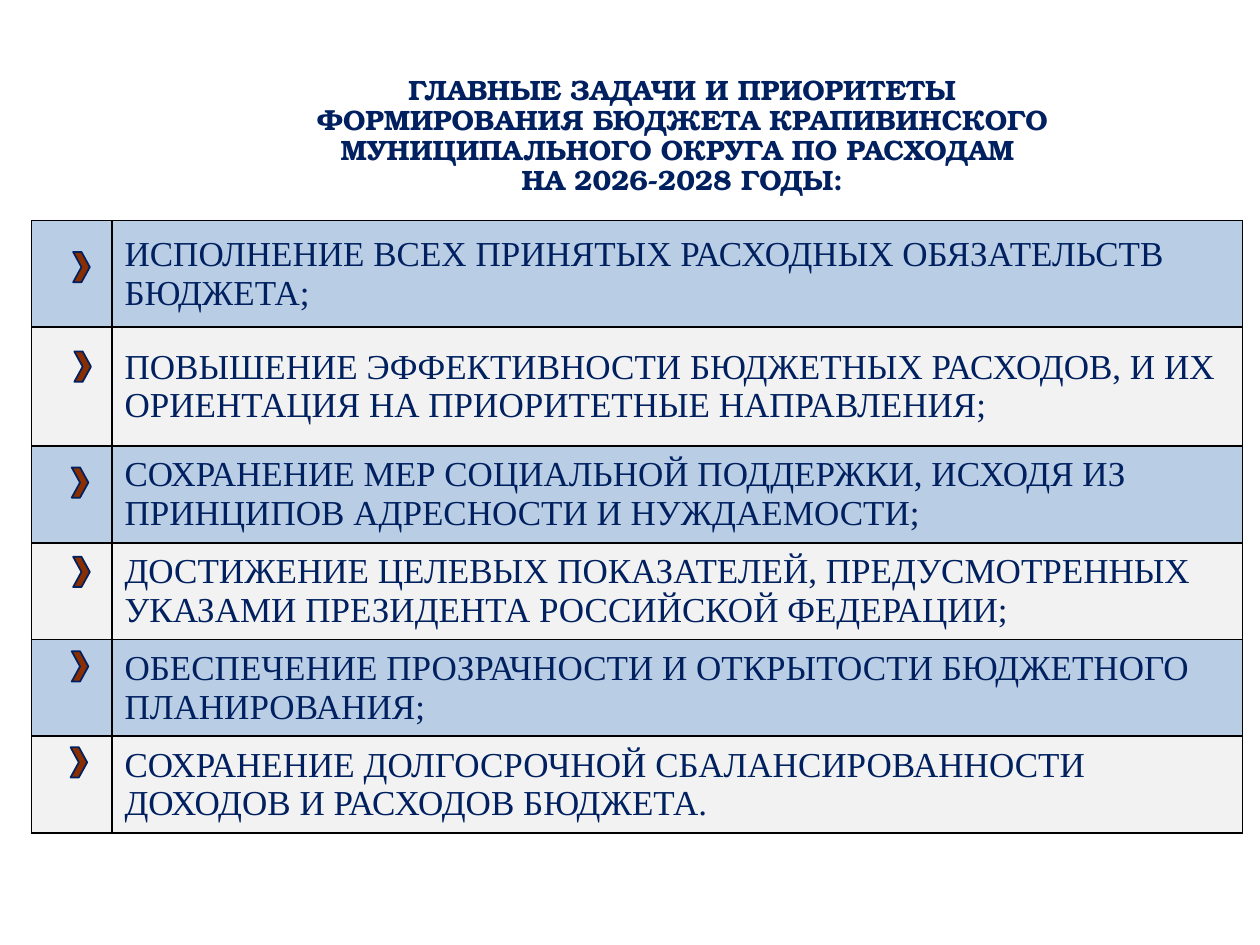
from dataclasses import dataclass

from lxml.etree import SubElement
from pptx import Presentation
from pptx.dml.color import RGBColor
from pptx.enum.shapes import MSO_SHAPE
from pptx.enum.text import MSO_ANCHOR, PP_ALIGN
from pptx.oxml import parse_xml
from pptx.oxml.ns import nsdecls, qn
from pptx.slide import Slide
from pptx.table import Table, _Cell
from pptx.text.text import _Paragraph
from pptx.util import Pt

NAVY = RGBColor(0x00, 0x20, 0x60)
BLUE = RGBColor(0xB9, 0xCD, 0xE5)
GREY = RGBColor(0xF2, 0xF2, 0xF2)
BROWN = RGBColor(0x8A, 0x2E, 0x00)
BLACK = RGBColor(0x00, 0x00, 0x00)

TITLE = (
    "ГЛАВНЫЕ ЗАДАЧИ И ПРИОРИТЕТЫ ФОРМИРОВАНИЯ БЮДЖЕТА КРАПИВИНСКОГО "
    "МУНИЦИПАЛЬНОГО ОКРУГА ПО РАСХОДАМ \vНА 2026-2028 ГОДЫ:"
)
COLUMN_WIDTHS = (46, 646)


@dataclass(frozen=True)
class Priority:
    text: str
    height: float
    marker_left: float
    marker_top: float


PRIORITIES = (
    Priority("ИСПОЛНЕНИЕ ВСЕХ ПРИНЯТЫХ РАСХОДНЫХ ОБЯЗАТЕЛЬСТВ БЮДЖЕТА;",
             61, 41.8, 144),
    Priority("ПОВЫШЕНИЕ ЭФФЕКТИВНОСТИ БЮДЖЕТНЫХ РАСХОДОВ, И ИХ ОРИЕНТАЦИЯ "
             "НА ПРИОРИТЕТНЫЕ НАПРАВЛЕНИЯ;", 68, 42.5, 200.9),
    Priority("СОХРАНЕНИЕ МЕР СОЦИАЛЬНОЙ ПОДДЕРЖКИ, ИСХОДЯ ИЗ ПРИНЦИПОВ "
             "АДРЕСНОСТИ И НУЖДАЕМОСТИ;", 55.2, 41, 267.1),
    Priority("ДОСТИЖЕНИЕ ЦЕЛЕВЫХ ПОКАЗАТЕЛЕЙ, ПРЕДУСМОТРЕННЫХ УКАЗАМИ "
             "ПРЕЗИДЕНТА РОССИЙСКОЙ ФЕДЕРАЦИИ;", 55.2, 41.8, 318.2),
    Priority("ОБЕСПЕЧЕНИЕ ПРОЗРАЧНОСТИ И ОТКРЫТОСТИ БЮДЖЕТНОГО ПЛАНИРОВАНИЯ;",
             55.2, 41, 372.2),
    Priority("СОХРАНЕНИЕ ДОЛГОСРОЧНОЙ СБАЛАНСИРОВАННОСТИ ДОХОДОВ И РАСХОДОВ "
             "БЮДЖЕТА.", 55.2, 40.3, 427),
)


def set_font(p: _Paragraph, name: str, size: float, bold: bool = False) -> None:
    p.font.name = name
    p.font.size = Pt(size)
    p.font.bold = bold
    p.font.color.rgb = NAVY


def add_title(s: Slide) -> None:
    tf = s.shapes.add_textbox(Pt(156), Pt(34.5), Pt(468), Pt(87)).text_frame
    tf.word_wrap = True
    tf.vertical_anchor = MSO_ANCHOR.MIDDLE
    p = tf.paragraphs[0]
    p.text = TITLE
    p.alignment = PP_ALIGN.CENTER
    p.line_spacing = 0.9
    set_font(p, "TeX Gyre Bonum", 16, bold=True)


def set_borders(cell: _Cell) -> None:
    tc_pr = cell._tc.get_or_add_tcPr()
    for i, side in enumerate(("lnL", "lnR", "lnT", "lnB")):
        ln = parse_xml(f'<a:{side} {nsdecls("a")} w="{Pt(1)}"/>')
        fill = SubElement(ln, qn("a:solidFill"))
        SubElement(fill, qn("a:srgbClr"), val=str(BLACK))
        tc_pr.insert(i, ln)


def fill_row(table: Table, index: int, priority: Priority) -> None:
    table.rows[index].height = Pt(priority.height)
    for cell in table.rows[index].cells:
        cell.fill.solid()
        cell.fill.fore_color.rgb = GREY if index % 2 else BLUE
        cell.vertical_anchor = MSO_ANCHOR.MIDDLE
        set_borders(cell)
    p = table.cell(index, 1).text_frame.paragraphs[0]
    p.text = priority.text
    set_font(p, "Times New Roman", 20)


def add_priorities(s: Slide) -> None:
    height = sum(priority.height for priority in PRIORITIES)
    table = s.shapes.add_table(
        len(PRIORITIES), len(COLUMN_WIDTHS),
        Pt(18), Pt(126), Pt(sum(COLUMN_WIDTHS)), Pt(height),
    ).table
    table.first_row = False
    table.horz_banding = False
    for column, width in zip(table.columns, COLUMN_WIDTHS):
        column.width = Pt(width)
    for i, priority in enumerate(PRIORITIES):
        fill_row(table, i, priority)


def add_marker(s: Slide, priority: Priority) -> None:
    sp = s.shapes.add_shape(
        MSO_SHAPE.CHEVRON,
        Pt(priority.marker_left), Pt(priority.marker_top), Pt(9.5), Pt(17.3),
    )
    sp.shadow.inherit = False
    sp.fill.solid()
    sp.fill.fore_color.rgb = BROWN
    sp.line.color.rgb = NAVY
    sp.line.width = Pt(1)


def main() -> None:
    prs = Presentation()
    prs.slide_width, prs.slide_height = Pt(720), Pt(540)
    s = prs.slides.add_slide(prs.slide_layouts[6])
    add_title(s)
    add_priorities(s)
    for priority in PRIORITIES:
        add_marker(s, priority)
    prs.save("out.pptx")


if __name__ == "__main__":
    main()
